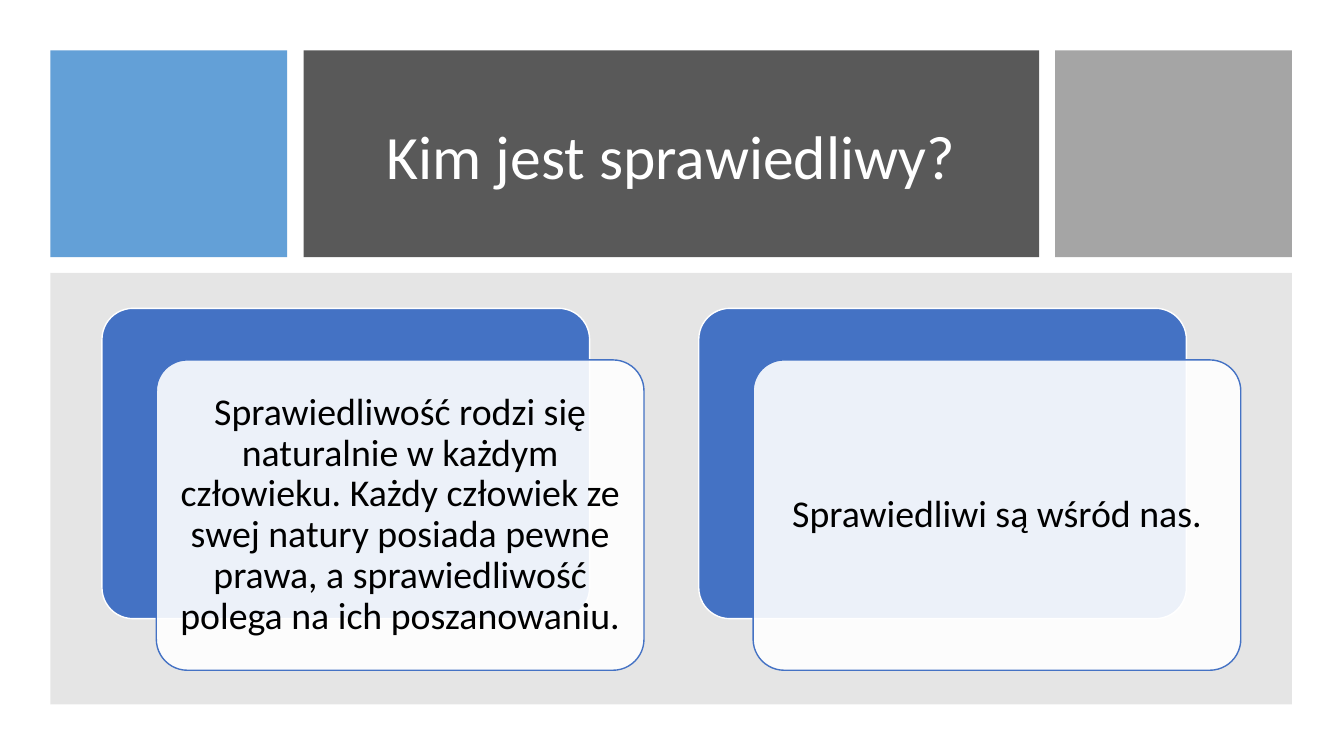
from lxml import etree
from pptx import Presentation
from pptx.dml.color import RGBColor
from pptx.enum import shapes, text
from pptx.oxml import ns
from pptx.util import Cm, Pt

HUES = {
    "sky": "5B9BD5",
    "dark": "595959",
    "gray": "A5A5A5",
    "panel": "808080",
    "blue": "4472C4",
    "white": "FFFFFF",
    "black": "000000",
}
FONT = "Calibri"


def add_box(kind, left, top, width, height, hue, alpha=100, edge=None):
    box = slide.shapes.add_shape(kind, Cm(left), Cm(top), Cm(width), Cm(height))
    box.shadow.inherit = False
    box.fill.solid()
    box.fill.fore_color.rgb = RGBColor.from_string(HUES[hue])
    if alpha < 100:
        tint = box.fill._xPr.find(".//" + ns.qn("a:srgbClr"))
        etree.SubElement(tint, ns.qn("a:alpha"), val=str(alpha * 1000))
    if edge:
        box.line.color.rgb = RGBColor.from_string(HUES[edge])
        box.line.width = Pt(1)
    else:
        box.line.fill.background()
    return box


def set_text(frame, words, size, hue):
    frame.text = words
    frame.word_wrap = True
    frame.auto_size = text.MSO_AUTO_SIZE.NONE
    frame.vertical_anchor = text.MSO_ANCHOR.MIDDLE
    line = frame.paragraphs[0]
    line.alignment = text.PP_ALIGN.CENTER
    line.line_spacing = 0.9
    line.font.name = FONT
    line.font.size = Pt(size)
    line.font.color.rgb = RGBColor.from_string(HUES[hue])


deck = Presentation()
deck.slide_width, deck.slide_height = Cm(33.87), Cm(19.05)
slide = deck.slides.add_slide(deck.slide_layouts[5])

rect = shapes.MSO_SHAPE.RECTANGLE
bands = [(1.27, 5.97, "sky", 95), (7.65, 18.54, "dark", 100), (26.59, 5.97, "gray", 100)]
for left, width, hue, alpha in bands:
    add_box(rect, left, 1.27, width, 5.21, hue, alpha)
add_box(rect, 1.27, 6.88, 31.29, 10.87, "panel", 20)

title = slide.shapes.title
title.left, title.top, title.width, title.height = Cm(8.46), Cm(2.03), Cm(16.92), Cm(3.96)
set_text(title.text_frame, "Kim jest sprawiedliwy?", 44, "white")
slide.shapes._spTree.append(title._element)

notes = [
    "Sprawiedliwość rodzi się naturalnie w każdym człowieku. Każdy człowiek ze swej "
    "natury posiada pewne prawa, a sprawiedliwość polega na ich poszanowaniu.",
    "Sprawiedliwi są wśród nas.",
]
left, top, width, height, pitch = 2.57, 7.77, 12.29, 7.82, 15.04
round_rect = shapes.MSO_SHAPE.ROUNDED_RECTANGLE
for index, words in enumerate(notes):
    x = left + index * pitch
    back = add_box(round_rect, x, top, width, height, "blue", edge="white")
    card = add_box(round_rect, x + 1.37, top + 1.3, width, height, "white", 90, "blue")
    back.adjustments[0] = card.adjustments[0] = 0.1
    frame = card.text_frame
    frame.margin_left = frame.margin_right = Cm(0.28)
    frame.margin_top = frame.margin_bottom = Cm(0.28)
    set_text(frame, words, 27, "black")

deck.save("out.pptx")
